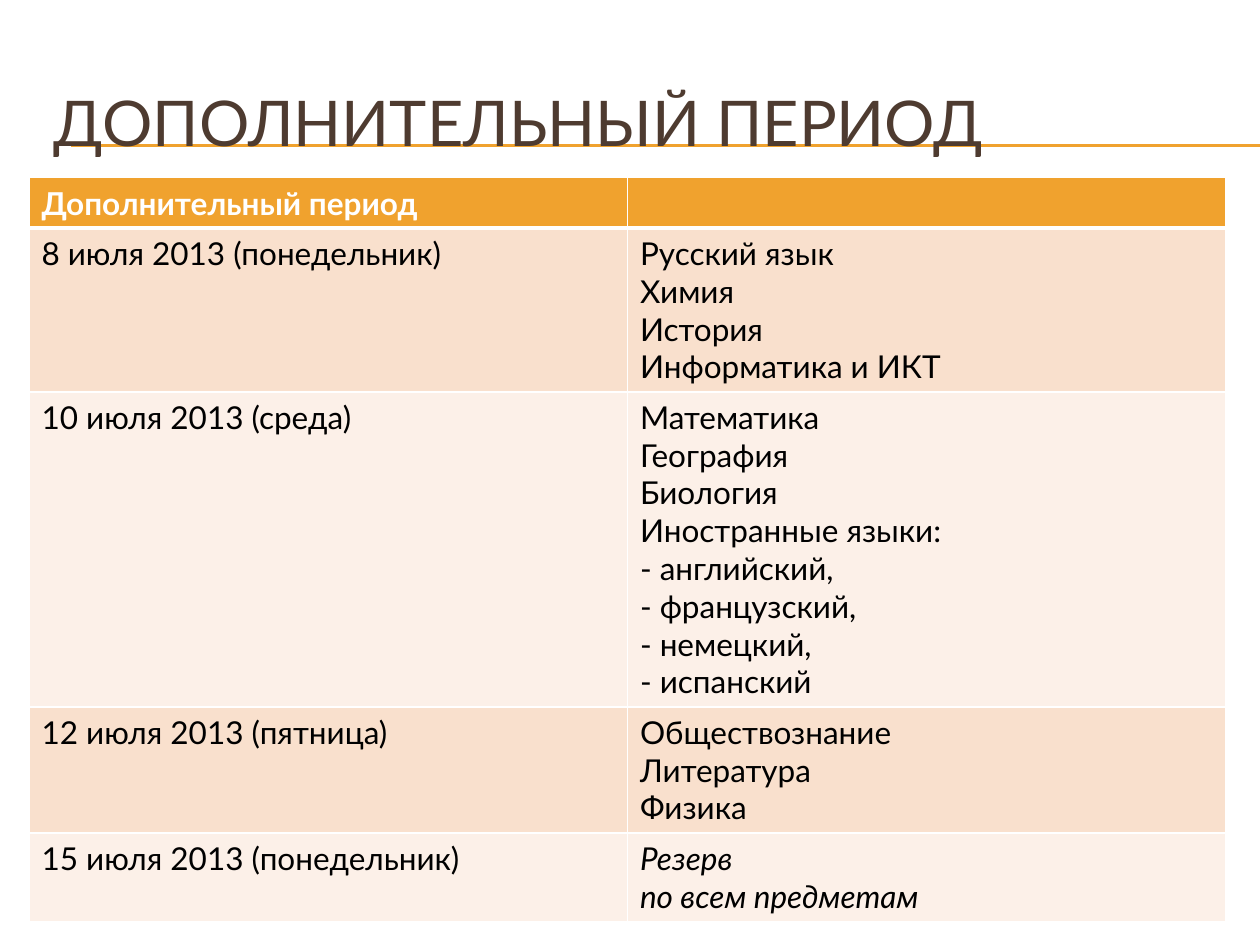
from lxml.etree import SubElement
from pptx import Presentation
from pptx.dml.color import RGBColor
from pptx.enum.shapes import MSO_CONNECTOR
from pptx.enum.text import MSO_ANCHOR
from pptx.oxml.ns import qn
from pptx.util import Inches, Pt

COLORS = {
    "accent": "F0A22E",
    "title": "4E3B30",
    "white": "FFFFFF",
    "text": "000000",
    "band_dark": "F9E0CD",
    "band_light": "FCF0E8",
}
FONT = "Lato"
SLIDE_WIDTH, SLIDE_HEIGHT = 10, 7.5
CONTENT_WIDTH = 0.95 * SLIDE_WIDTH
LINE_HEIGHT, CELL_PADDING = 0.3, 0.1

HEADER = ("Дополнительный период", "")
SCHEDULE = [
    ("8 июля 2013 (понедельник)",
     ["Русский язык", "Химия", "История", "Информатика и ИКТ"]),
    ("10 июля 2013 (среда)",
     ["Математика", "География", "Биология", "Иностранные языки:",
      "- английский,", "- французский,", "- немецкий,", "- испанский"]),
    ("12 июля 2013 (пятница)", ["Обществознание", "Литература", "Физика"]),
    ("15 июля 2013 (понедельник)", ["Резерв", "по всем предметам"]),
]


def color(name):
    return RGBColor.from_string(COLORS[name])


def style_text(paragraph, size, color_name, bold=False, italic=False):
    font = paragraph.font
    font.name, font.size = FONT, Pt(size)
    font.bold, font.italic = bold, italic
    font.color.rgb = color(color_name)


def add_rule(slide, y):
    line = slide.shapes.add_connector(
        MSO_CONNECTOR.STRAIGHT, Inches(0.56), Inches(y), Inches(SLIDE_WIDTH), Inches(y))
    line.line.color.rgb = color("accent")
    line.line.width = Pt(0.75)
    SubElement(line._element.spPr, qn("a:effectLst"))


def add_title(slide, text):
    box = slide.shapes.add_textbox(
        Inches(0.33), Inches(0.5), Inches(CONTENT_WIDTH), Inches(0.92))
    frame = box.text_frame
    frame.word_wrap = True
    frame.vertical_anchor = MSO_ANCHOR.MIDDLE
    frame.text = text
    style_text(frame.paragraphs[0], 36, "title")


def set_borders(cell, top, bottom):
    properties = cell._tc.get_or_add_tcPr()
    for side, width in (("L", 1), ("R", 1), ("T", top), ("B", bottom)):
        border = SubElement(properties, qn(f"a:ln{side}"), w=str(Pt(width)))
        fill = SubElement(border, qn("a:solidFill"))
        SubElement(fill, qn("a:srgbClr"), val=COLORS["white"])


def fill_cell(cell, text, fill_name, top=1, bottom=1, **text_style):
    set_borders(cell, top, bottom)
    cell.fill.solid()
    cell.fill.fore_color.rgb = color(fill_name)
    cell.text = text
    style_text(cell.text_frame.paragraphs[0], 18, **text_style)


def add_schedule(slide):
    line_counts = [1] + [len(subjects) for _, subjects in SCHEDULE]
    heights = [CELL_PADDING + LINE_HEIGHT * count for count in line_counts]
    table = slide.shapes.add_table(
        len(heights), 2, Inches(0.23), Inches(1.41),
        Inches(CONTENT_WIDTH), Inches(sum(heights))).table
    for row, height in zip(table.rows, heights):
        row.height = Inches(height)

    # Header row
    for column, text in enumerate(HEADER):
        fill_cell(table.cell(0, column), text, "accent", bottom=3,
                  color_name="white", bold=True)

    # Banded rows; the last one is the reserve day
    for row, (day, subjects) in enumerate(SCHEDULE, start=1):
        band = "band_dark" if row % 2 else "band_light"
        top = 3 if row == 1 else 1
        fill_cell(table.cell(row, 0), day, band, top, color_name="text")
        fill_cell(table.cell(row, 1), "\v".join(subjects), band, top,
                  color_name="text", italic=row == len(SCHEDULE))


def main():
    presentation = Presentation()
    presentation.slide_width = Inches(SLIDE_WIDTH)
    presentation.slide_height = Inches(SLIDE_HEIGHT)
    slide = presentation.slides.add_slide(presentation.slide_layouts[6])

    # Double rule behind the title
    for y in (1.15, 1.16):
        add_rule(slide, y)
    add_title(slide, "ДОПОЛНИТЕЛЬНЫЙ ПЕРИОД")
    add_schedule(slide)
    presentation.save("out.pptx")


if __name__ == "__main__":
    main()
